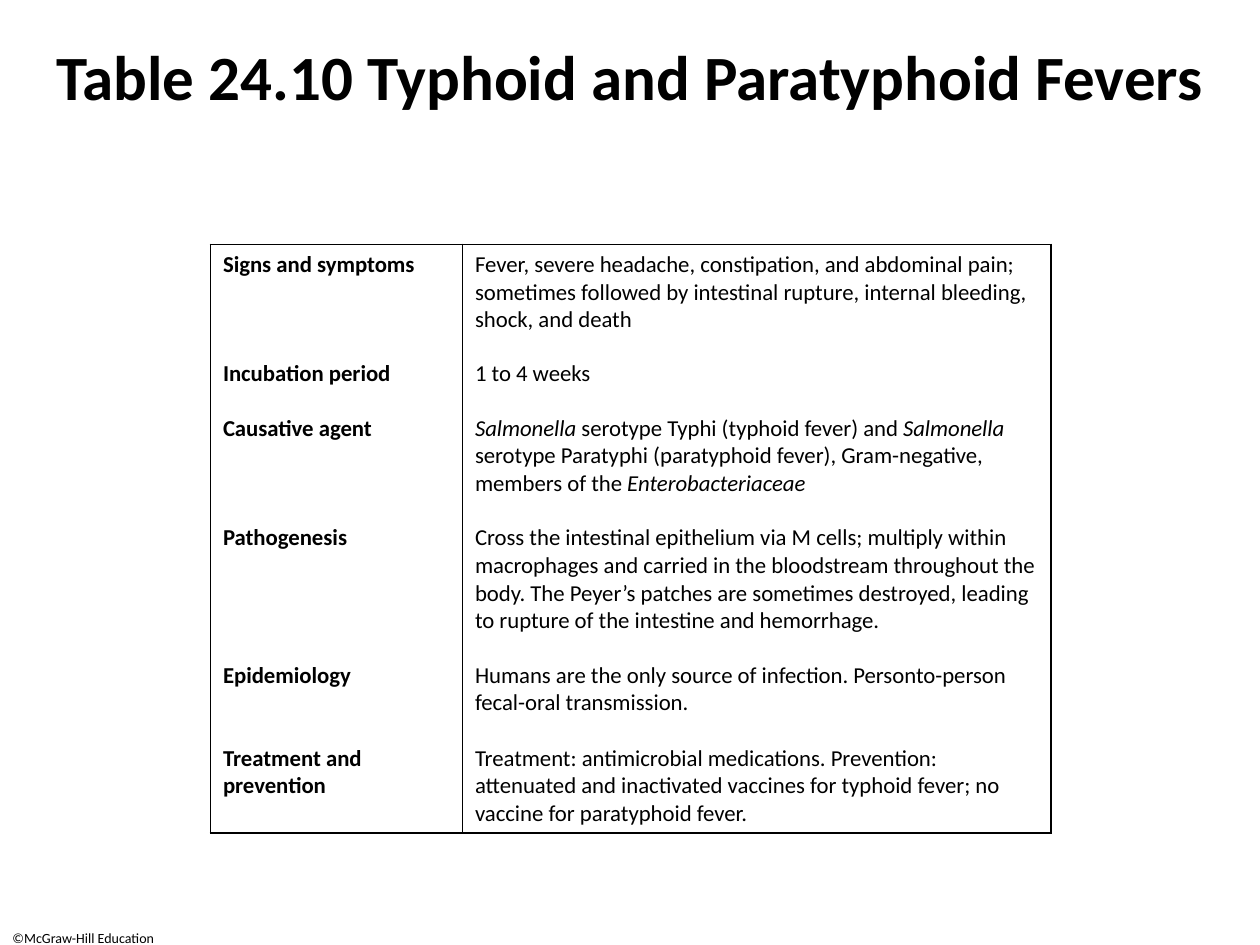
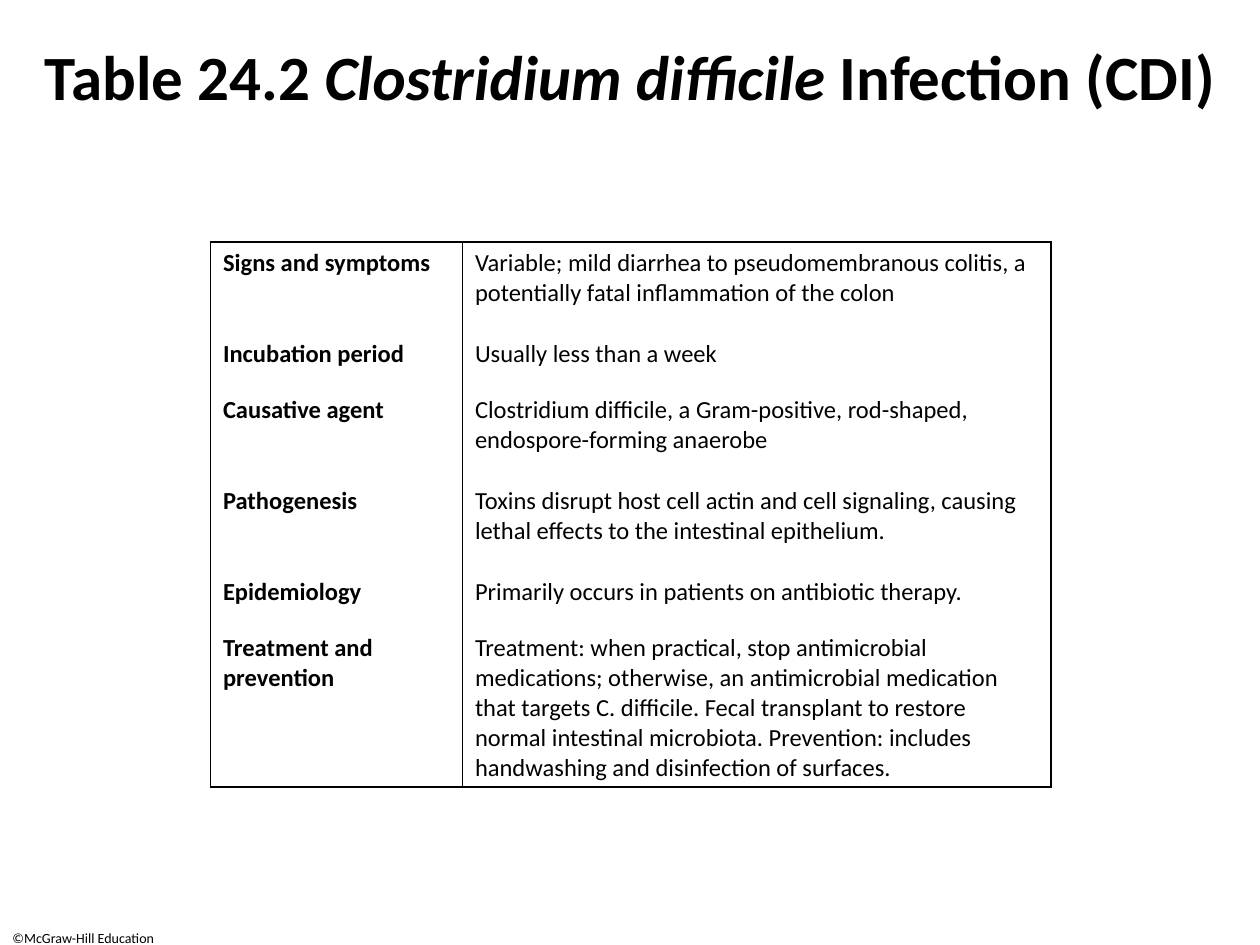
import lxml.etree
import pptx
import pptx.dml.color
import pptx.enum.text
import pptx.oxml.ns
import pptx.util

Inches = pptx.util.Inches
Pt = pptx.util.Pt
ALIGN = pptx.enum.text.PP_ALIGN

FONT = "Calibri"
BLACK = "000000"
WHITE = "FFFFFF"
FOOTER = "©McGraw-Hill Education"
TABLE_LEFT = 1.67
COLUMN_WIDTHS = (2, 4.67)

TYPHOID_ROWS = [
    ("Signs and symptoms", 0.87,
     "Fever, severe headache, constipation, and abdominal pain; sometimes followed by "
     "intestinal rupture, internal bleeding, shock, and death"),
    ("Incubation period", 0.43, "1 to 4 weeks"),
    ("Causative agent", 0.87,
     "*Salmonella* serotype Typhi (typhoid fever) and *Salmonella* serotype Paratyphi "
     "(paratyphoid fever), Gram-negative, members of the *Enterobacteriaceae*"),
    ("Pathogenesis", 1.09,
     "Cross the intestinal epithelium via M cells; multiply within macrophages and carried "
     "in the bloodstream throughout the body. The Peyer’s patches are sometimes destroyed, "
     "leading to rupture of the intestine and hemorrhage."),
    ("Epidemiology", 0.66,
     "Humans are the only source of infection. Personto-person fecal-oral transmission."),
    ("Treatment and prevention", 0.75,
     "Treatment: antimicrobial medications. Prevention: attenuated and inactivated vaccines "
     "for typhoid fever; no vaccine for paratyphoid fever."),
]

CDI_ROWS = [
    ("Signs and symptoms", 0.72,
     "Variable; mild diarrhea to pseudomembranous colitis, a potentially fatal inflammation "
     "of the colon"),
    ("Incubation period", 0.45, "Usually less than a week"),
    ("Causative agent", 0.72,
     "Clostridium difficile, a Gram-positive, rod-shaped, endospore-forming anaerobe"),
    ("Pathogenesis", 0.72,
     "Toxins disrupt host cell actin and cell signaling, causing lethal effects to the "
     "intestinal epithelium."),
    ("Epidemiology", 0.45, "Primarily occurs in patients on antibiotic therapy."),
    ("Treatment and prevention", 0.72,
     "Treatment: when practical, stop antimicrobial medications; otherwise, an antimicrobial "
     "medication that targets C. difficile. Fecal transplant to restore normal intestinal "
     "microbiota. Prevention: includes handwashing and disinfection of surfaces."),
]


def rgb(value):
    return pptx.dml.color.RGBColor.from_string(value)


def write(tf, text, size, bold=False, color=BLACK, align=ALIGN.LEFT):
    """Fill the first paragraph; parts between asterisks become italic."""
    tf.word_wrap = True
    p = tf.paragraphs[0]
    p.alignment = align
    for i, part in enumerate(text.split("*")):
        if not part:
            continue
        r = p.add_run()
        r.text = part
        r.font.name = FONT
        r.font.size = Pt(size)
        r.font.bold = bold
        r.font.italic = i % 2 == 1
        r.font.color.rgb = rgb(color)


def add_text(s, text, left, top, width, height, **style):
    sp = s.shapes.add_textbox(Inches(left), Inches(top), Inches(width), Inches(height))
    write(sp.text_frame, text, **style)


def set_borders(cell, sides, color=BLACK, width=1):
    """Draw the named sides (of L, R, T, B) and clear the others."""
    qn = pptx.oxml.ns.qn
    tc_pr = cell._tc.get_or_add_tcPr()
    for side in "LRTB":
        ln = lxml.etree.SubElement(tc_pr, qn(f"a:ln{side}"), w=str(Pt(width)))
        if side in sides:
            fill = lxml.etree.SubElement(ln, qn("a:solidFill"))
            lxml.etree.SubElement(fill, qn("a:srgbClr"), val=color)
        else:
            lxml.etree.SubElement(ln, qn("a:noFill"))


def add_fact_table(s, rows, top, size):
    heights = [height for _, height, _ in rows]
    table = s.shapes.add_table(
        len(rows), len(COLUMN_WIDTHS), Inches(TABLE_LEFT), Inches(top),
        Inches(sum(COLUMN_WIDTHS)), Inches(sum(heights))).table
    table.first_row = False
    table.horz_banding = False
    for column, width in zip(table.columns, COLUMN_WIDTHS):
        column.width = Inches(width)
    for i, (label, height, fact) in enumerate(rows):
        table.rows[i].height = Inches(height)
        sides = "LR" + "T" * (i == 0) + "B" * (i == len(rows) - 1)
        for j, text in enumerate((label, fact)):
            cell = table.cell(i, j)
            write(cell.text_frame, text, size, bold=j == 0)
            set_borders(cell, sides)
            cell.fill.background()


def add_table_slide(prs, title, rows, top, size):
    s = prs.slides.add_slide(prs.slide_layouts[6])
    s.background.fill.solid()
    s.background.fill.fore_color.rgb = rgb(WHITE)
    add_text(s, FOOTER, 0, 7.33, 1.5, 0.17, size=8)
    add_text(s, title, 0, 0.25, 10, 0.67, size=36, bold=True, align=ALIGN.CENTER)
    add_fact_table(s, rows, top, size)


def main():
    prs = pptx.Presentation()
    prs.slide_width = Inches(10)
    prs.slide_height = Inches(7.5)
    add_table_slide(prs, "Table 24.10 Typhoid and Paratyphoid Fevers",
                    TYPHOID_ROWS, top=1.94, size=13)
    add_table_slide(prs, "Table 24.2 *Clostridium difficile *Infection (CDI)",
                    CDI_ROWS, top=1.92, size=14)
    prs.save("out.pptx")


if __name__ == "__main__":
    main()
